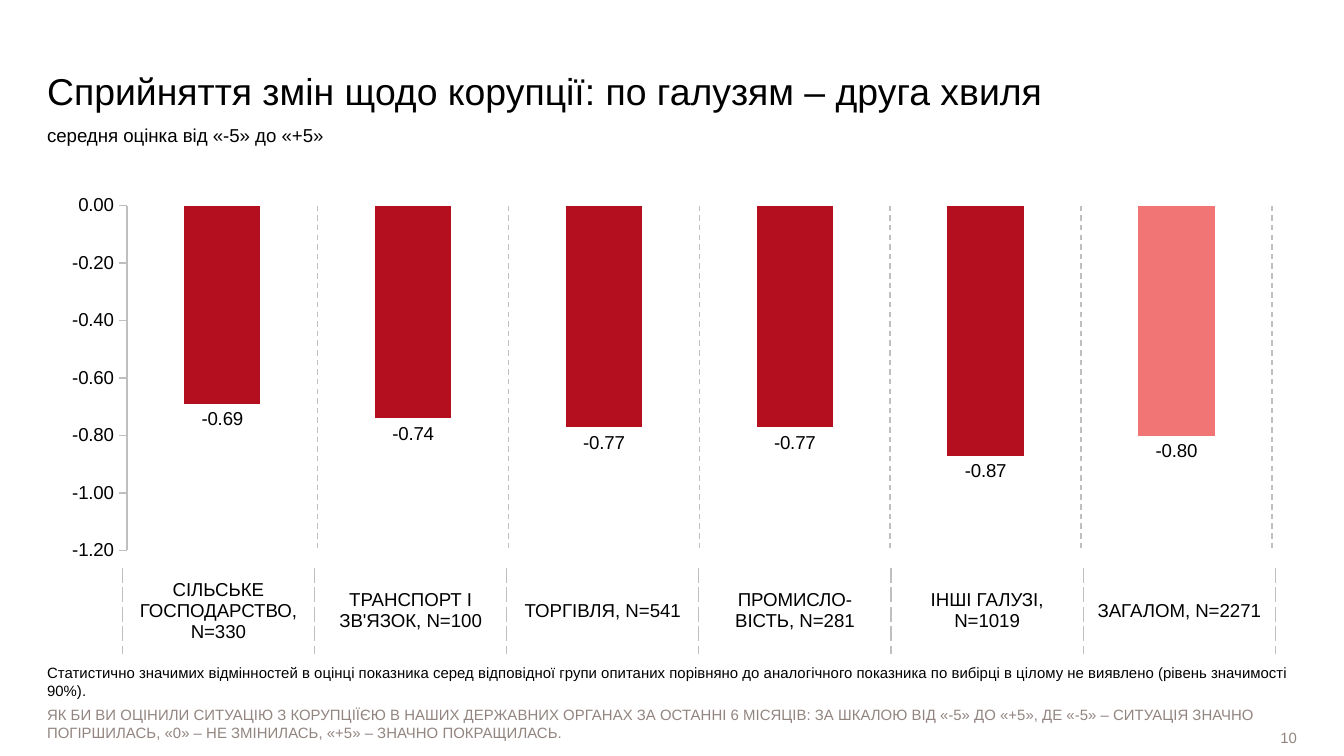
from pptx import Presentation
from pptx.chart.data import CategoryChartData
from pptx.dml.color import RGBColor
from pptx.enum.chart import XL_CHART_TYPE, XL_LABEL_POSITION, XL_TICK_MARK
from pptx.enum.dml import MSO_LINE
from pptx.enum.text import MSO_ANCHOR, MSO_AUTO_SIZE, PP_ALIGN
from pptx.oxml import parse_xml
from pptx.oxml.ns import nsdecls
from pptx.util import Inches, Pt


def color(text):
    return RGBColor.from_string(text)


def write(frame, text, size=10, tint="000000", align=PP_ALIGN.LEFT,
          anchor=MSO_ANCHOR.TOP, before=0, pad=0):
    frame.word_wrap = True
    frame.vertical_anchor = anchor
    frame.margin_left = frame.margin_right = Inches(pad)
    frame.margin_top = frame.margin_bottom = Inches(pad / 2)
    frame.text = text
    for para in frame.paragraphs:
        para.alignment = align
        para.space_before = Pt(before)
        for run in para.runs:
            run.font.name = "Arial"
            run.font.size = Pt(size)
            run.font.color.rgb = color(tint)


GRAY, LINE = "928580", "BFBFBF"
RED, PINK = "B30F1F", "F07574"
LEFT, WIDTH = Inches(0.35), Inches(9.29)

deck = Presentation()
deck.slide_width = Inches(10)
deck.slide_height = Inches(10) * 9 // 16
slide = deck.slides.add_slide(deck.slide_layouts[5])

title = slide.shapes.title
title.left, title.top = LEFT, Inches(0.21)
title.width, title.height = WIDTH, Inches(0.63)
write(title.text_frame, "Сприйняття змін щодо корупції: по галузям – друга хвиля",
      size=20, anchor=MSO_ANCHOR.BOTTOM)
title.text_frame.auto_size = MSO_AUTO_SIZE.NONE

data = CategoryChartData(number_format="0.00")
data.categories = ["1", "2", "3", "4", "5", "6"]
data.add_series("Series 1", [-0.69, -0.74, -0.77, -0.77, -0.87, -0.8])
chart = slide.shapes.add_chart(XL_CHART_TYPE.COLUMN_CLUSTERED, LEFT, Inches(1.4),
                               WIDTH, Inches(2.83), data).chart
chart.has_legend = chart.has_title = False
chart.font.name = "Arial"
chart.font.size = Pt(10)
chart.font.color.rgb = color("000000")

cats = chart.category_axis
cats.visible = False
cats.has_major_gridlines = True
grid = cats.major_gridlines.format.line
grid.color.rgb = color(LINE)
grid.width = Pt(0.75)
grid.dash_style = MSO_LINE.DASH

axis = chart.value_axis
axis.has_major_gridlines = False
axis.minimum_scale, axis.maximum_scale, axis.major_unit = -1.2, 0, 0.2
axis.major_tick_mark = XL_TICK_MARK.OUTSIDE
axis.tick_labels.number_format = "0.00"
axis.tick_labels.number_format_is_linked = False
axis.format.line.color.rgb = color(LINE)
axis.format.line.width = Pt(0.75)

plot = chart.plots[0]
plot.gap_width = 150
plot.vary_by_categories = False
bars = plot.series[0]
bars.invert_if_negative = False
for fill, tint in ((bars.format.fill, RED), (bars.points[5].format.fill, PINK)):
    fill.solid()
    fill.fore_color.rgb = color(tint)
plot.has_data_labels = True
labels = plot.data_labels
labels.show_value = True
labels.position = XL_LABEL_POSITION.OUTSIDE_END
labels.number_format = "0.00"
labels.number_format_is_linked = False

area = chart._chartSpace.chart.plotArea
for old in area.findall("{*}layout"):
    area.remove(old)
area.insert(0, parse_xml(
    f'<c:layout {nsdecls("c")}><c:manualLayout><c:layoutTarget val="inner"/>'
    '<c:xMode val="edge"/><c:yMode val="edge"/><c:x val="0.064"/><c:y val="0.046"/>'
    '<c:w val="0.917"/><c:h val="0.907"/></c:manualLayout></c:layout>'))

notes = [
    (0.35, 0.92, 9.29, 0.24, "середня оцінка від «-5» до «+5»", dict(before=3)),
    (0.35, 4.94, 9.29, 0.16,
     "Статистично значимих відмінностей в оцінці показника серед відповідної групи "
     "опитаних порівняно до аналогічного показника по вибірці в цілому не виявлено "
     "(рівень значимості 90%).", dict(size=8)),
    (0.35, 5.25, 9.29, 0.16,
     "ЯК БИ ВИ ОЦІНИЛИ СИТУАЦІЮ З КОРУПЦІЇЄЮ В НАШИХ ДЕРЖАВНИХ ОРГАНАХ ЗА ОСТАННІ "
     "6 МІСЯЦІВ: ЗА ШКАЛОЮ ВІД «-5» ДО «+5», ДЕ «-5» – СИТУАЦІЯ ЗНАЧНО ПОГІРШИЛАСЬ, "
     "«0» – НЕ ЗМІНИЛАСЬ, «+5» – ЗНАЧНО ПОКРАЩИЛАСЬ.", dict(size=8, tint=GRAY)),
    (8.23, 5.41, 1.42, 0.16, "10",
     dict(size=8, tint=GRAY, align=PP_ALIGN.RIGHT, anchor=MSO_ANCHOR.MIDDLE)),
]
for x, y, w, h, text, style in notes:
    box = slide.shapes.add_textbox(Inches(x), Inches(y), Inches(w), Inches(h))
    write(box.text_frame, text, **style)

names = ["СІЛЬСЬКЕ ГОСПОДАРСТВО, N=330", "ТРАНСПОРТ І ЗВ'ЯЗОК, N=100",
         "ТОРГІВЛЯ, N=541", "ПРОМИСЛО-\nВІСТЬ, N=281",
         "ІНШІ ГАЛУЗІ, N=1019", "ЗАГАЛОМ, N=2271"]
table = slide.shapes.add_table(1, len(names), Inches(0.91), Inches(4.23),
                               Inches(8.58), Inches(0.63)).table
table.first_row = table.horz_banding = False
for cell, name in zip(table.rows[0].cells, names):
    write(cell.text_frame, name, align=PP_ALIGN.CENTER, pad=0.1)
    cell.vertical_anchor = MSO_ANCHOR.MIDDLE
    for side in ("lnL", "lnR"):
        cell._tc.get_or_add_tcPr().append(parse_xml(
            f'<a:{side} {nsdecls("a")} w="{Pt(0.75)}"><a:solidFill><a:srgbClr val="{LINE}"/>'
            f'</a:solidFill><a:prstDash val="dash"/></a:{side}>'))
    cell.fill.background()

deck.save("out.pptx")
